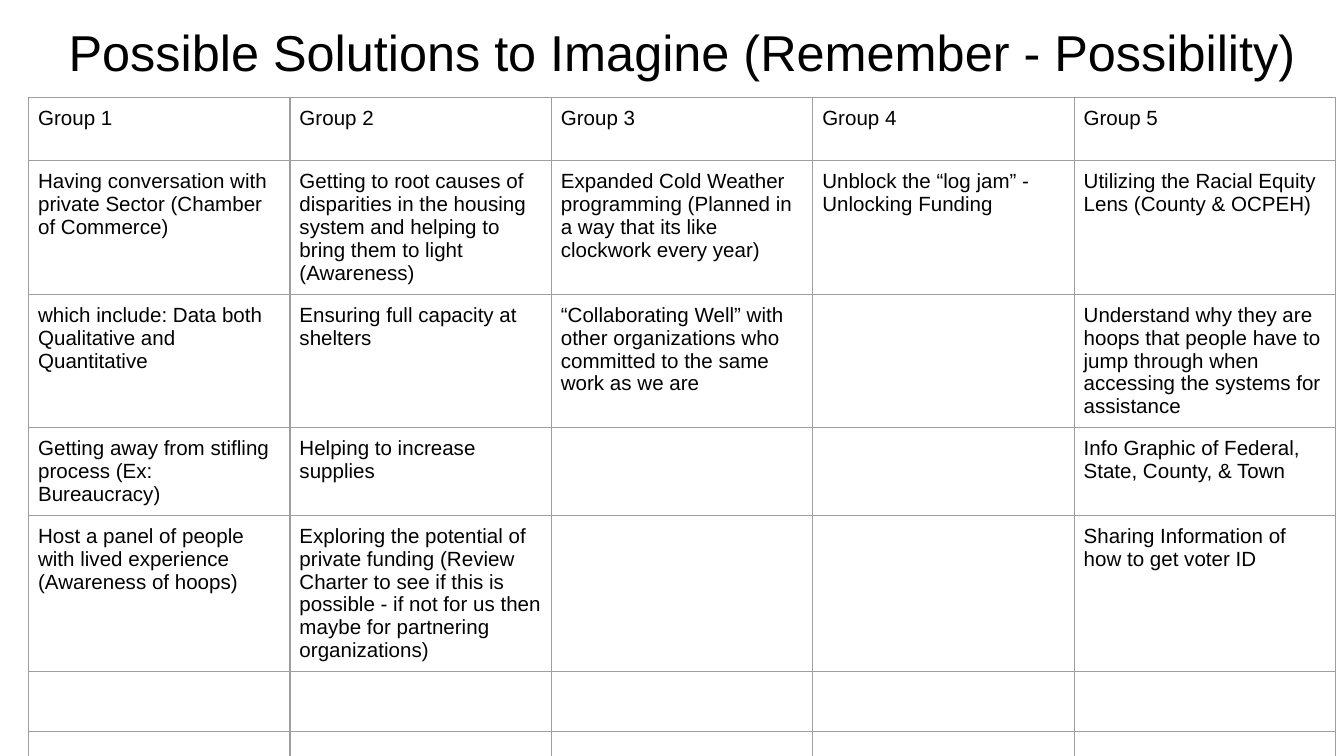
from lxml import etree
from pptx import Presentation
from pptx.dml.color import RGBColor
from pptx.enum.text import MSO_ANCHOR, MSO_AUTO_SIZE, PP_ALIGN
from pptx.oxml.ns import qn
from pptx.util import Cm, Pt

TOP = MSO_ANCHOR.TOP
NO_AUTOFIT = MSO_AUTO_SIZE.NONE
LEFT = PP_ALIGN.LEFT
CENTER = PP_ALIGN.CENTER

TITLE = "Possible Solutions to Imagine (Remember - Possibility)"
ROWS = [
    ["Group 1", "Group 2", "Group 3", "Group 4", "Group 5"],
    [
        "Having conversation with private Sector (Chamber of Commerce)",
        "Getting to root causes of disparities in the housing system and helping to bring them to light (Awareness)",
        "Expanded Cold Weather programming (Planned in a way that its like clockwork every year)",
        "Unblock the “log jam” - Unlocking Funding",
        "Utilizing the Racial Equity Lens (County & OCPEH)",
    ],
    [
        "which include: Data both Qualitative and Quantitative",
        "Ensuring full capacity at shelters",
        "“Collaborating Well” with other organizations who committed to the same work as we are",
        "",
        "Understand why they are hoops that people have to jump through when accessing the systems for assistance",
    ],
    [
        "Getting away from stifling process (Ex: Bureaucracy)",
        "Helping to increase supplies",
        "",
        "",
        "Info Graphic of Federal, State, County, & Town",
    ],
    [
        "Host a panel of people with lived experience (Awareness of hoops)",
        "Exploring the potential of private funding (Review Charter to see if this is possible - if not for us then maybe for partnering organizations)",
        "",
        "",
        "Sharing Information of how to get voter ID",
    ],
    [""] * 5,
    [""] * 5,
]
COLORS = {"background": "FFFFFF", "text": "000000", "border": "9E9E9E"}
FONT = "Arial"
HEADER_HEIGHT, FIRST_HEIGHT, ROW_HEIGHT = 1.2, 2.41, 1.14
ROW_HEIGHTS = [HEADER_HEIGHT, FIRST_HEIGHT] + [ROW_HEIGHT] * (len(ROWS) - 2)
COLUMN_WIDTH = 4.94
TABLE_LEFT, TABLE_TOP = 0.54, 1.84
CELL_MARGIN = 0.18
BORDER_WIDTH = 0.75


def write_text(frame, text, size, margin, alignment=LEFT):
    frame.word_wrap = True
    frame.margin_left = frame.margin_right = Cm(margin)
    frame.margin_top = frame.margin_bottom = Cm(margin)
    paragraph = frame.paragraphs[0]
    paragraph.alignment = alignment
    if text:
        run = paragraph.add_run()
        run.text = text
        run.font.name = FONT
        run.font.size = Pt(size)
        run.font.color.rgb = RGBColor.from_string(COLORS["text"])


def set_borders(cell):
    properties = cell._tc.get_or_add_tcPr()
    for position, side in enumerate(("a:lnL", "a:lnR", "a:lnT", "a:lnB")):
        line = etree.Element(qn(side), w=str(Pt(BORDER_WIDTH)))
        fill = etree.SubElement(line, qn("a:solidFill"))
        etree.SubElement(fill, qn("a:srgbClr"), val=COLORS["border"])
        properties.insert(position, line)


def add_title(slide):
    title = slide.shapes.title
    title.left, title.top = Cm(0.54), Cm(0.15)
    title.width, title.height = Cm(24.7), Cm(1.57)
    frame = title.text_frame
    frame.auto_size = NO_AUTOFIT
    frame.vertical_anchor = TOP
    write_text(frame, TITLE, size=27, margin=0.25, alignment=CENTER)


def add_solutions_table(slide):
    column_count = len(ROWS[0])
    table = slide.shapes.add_table(
        len(ROWS), column_count, Cm(TABLE_LEFT), Cm(TABLE_TOP),
        Cm(COLUMN_WIDTH * column_count), Cm(sum(ROW_HEIGHTS)),
    ).table
    table.first_row = table.horz_banding = False
    for column in table.columns:
        column.width = Cm(COLUMN_WIDTH)
    for row, height, texts in zip(table.rows, ROW_HEIGHTS, ROWS):
        row.height = Cm(height)
        for cell, text in zip(row.cells, texts):
            cell.fill.background()
            cell.vertical_anchor = TOP
            for side in ("left", "right", "top", "bottom"):
                setattr(cell, f"margin_{side}", Cm(CELL_MARGIN))
            write_text(cell.text_frame, text, size=11, margin=CELL_MARGIN)
            set_borders(cell)


def main():
    presentation = Presentation()
    presentation.slide_width, presentation.slide_height = Cm(25.4), Cm(14.29)
    slide = presentation.slides.add_slide(presentation.slide_layouts[5])
    background = slide.background.fill
    background.solid()
    background.fore_color.rgb = RGBColor.from_string(COLORS["background"])
    add_title(slide)
    add_solutions_table(slide)
    presentation.save("out.pptx")


if __name__ == "__main__":
    main()
